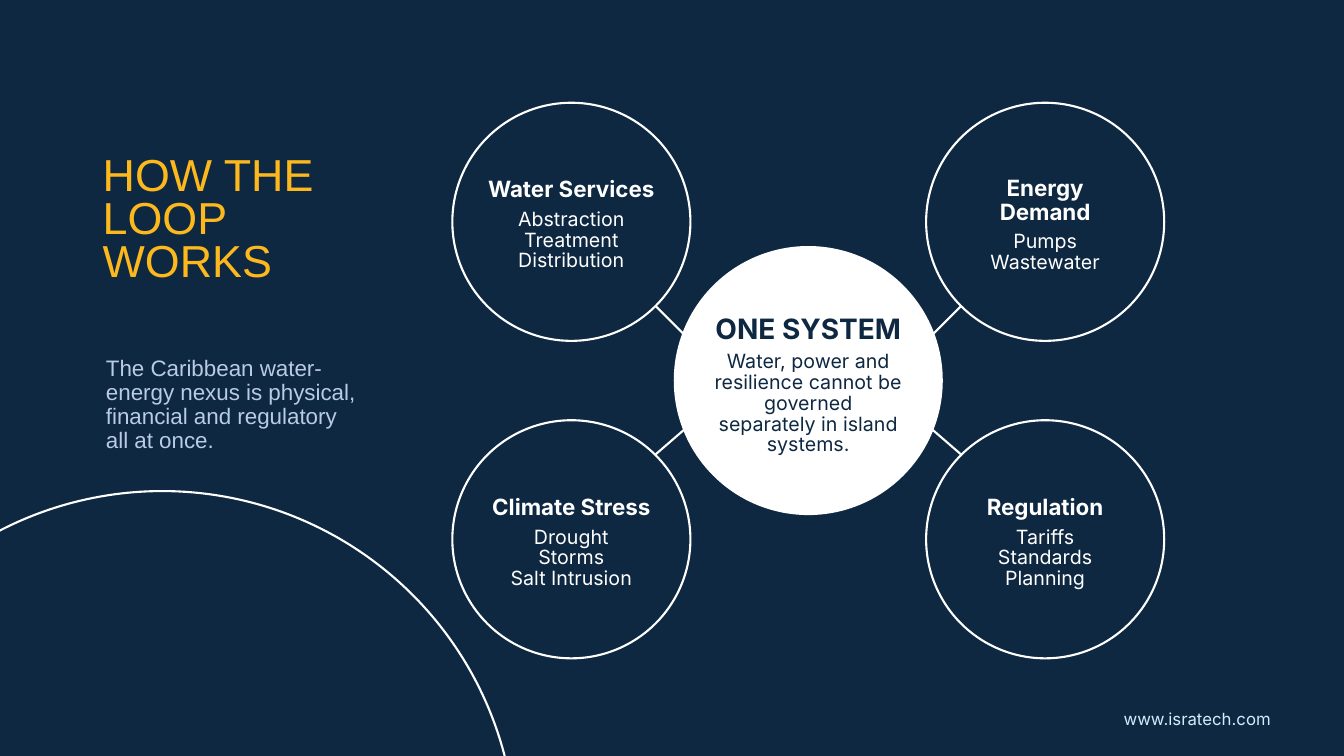
"""Builds the slide on the loop of water, energy, climate and regulation."""
import pptx
import pptx.dml.color
import pptx.enum.shapes
import pptx.enum.text
import pptx.oxml.ns
import pptx.util
from pptx.util import Cm, Pt

NAVY, WHITE, GOLD = "0E2841", "FFFFFF", "FDB81E"
MIST, ICE = "B8CCE3", "D1ECFE"
ALIGN = pptx.enum.text.PP_ALIGN
HUB = (20.37, 9.59)
REACH = (11.94, 8)
NODES = [
    (-1, -1, "Water Services", ["Abstraction", "Treatment", "Distribution"]),
    (1, -1, "Energy Demand", ["Pumps", "Wastewater"]),
    (-1, 1, "Climate Stress", ["Drought", "Storms", "Salt Intrusion"]),
    (1, 1, "Regulation", ["Tariffs", "Standards", "Planning"]),
]


def paint(target, tone):
    """Set a solid colour on a fill."""
    target.solid()
    target.fore_color.rgb = pptx.dml.color.RGBColor.from_string(tone)


def pad(frame, left, top, right, bottom):
    """Set wrapping and the four insets in centimetres."""
    frame.word_wrap = True
    frame.margin_left, frame.margin_top = Cm(left), Cm(top)
    frame.margin_right, frame.margin_bottom = Cm(right), Cm(bottom)


def write(para, text, size, tone, face, bold=False, space=1, align=ALIGN.LEFT):
    """Add one styled run to a paragraph."""
    para.alignment, para.line_spacing = align, space
    run = para.add_run()
    run.text = text
    run.font.size, run.font.name, run.font.bold = Pt(size), face, bold
    paint(run.font.fill, tone)


def label(slide, box, inset, text, *style, **more):
    """Add a text box with a single paragraph."""
    frame = slide.shapes.add_textbox(*map(Cm, box)).text_frame
    pad(frame, *inset)
    write(frame.paragraphs[0], text, *style, **more)


def ring(slide, mid, size, fill=None):
    """Add a circle round its centre, either filled or outlined."""
    left, top = (at - size / 2 for at in mid)
    shape = slide.shapes.add_shape(
        pptx.enum.shapes.MSO_SHAPE.OVAL, Cm(left), Cm(top), Cm(size), Cm(size))
    shape.shadow.inherit = False
    if fill:
        paint(shape.fill, fill)
        shape.line.fill.background()
    else:
        shape.fill.background()
        paint(shape.line.fill, WHITE)
        shape.line.width = Pt(1.5)
    return shape


def fill_in(shape, head, rows, size, tone, base):
    """Write a bold heading and its rows inside a circle."""
    frame = shape.text_frame
    pad(frame, 0, 0.79, 0, base)
    frame.vertical_anchor = pptx.enum.text.MSO_ANCHOR.MIDDLE
    style = dict(space=0.88, align=ALIGN.CENTER)
    write(frame.paragraphs[0], head, size, tone, "Inter", True, **style)
    for row in rows:
        write(frame.add_paragraph(), row, 14, tone, "Inter", **style)
    frame.paragraphs[1].space_before = Pt(5.3)


def spoke(slide, side, level):
    """Link the hub to the circle on one side and level."""
    out, near = (1.89, 1) if level < 0 else (1.87, 1.1)
    x, y = HUB
    ends = (x + side * 3.86, y + level * out, x + side * 2.97, y + level * near)
    line = slide.shapes.add_connector(
        pptx.enum.shapes.MSO_CONNECTOR.STRAIGHT, *map(Cm, ends))
    paint(line.line.fill, WHITE)
    line.line.width = Pt(1.5)
    props = line._element.spPr
    props.append(props.makeelement(pptx.oxml.ns.qn("a:effectLst"), {}))


def main():
    """Build and save the slide."""
    deck = pptx.Presentation()
    deck.slide_width, deck.slide_height = Cm(33.87), Cm(19.05)
    slide = deck.slides.add_slide(deck.slide_layouts[6])
    paint(slide.background.fill, NAVY)

    inset = (0.25, 0.13, 0.25, 0.13)
    label(slide, (25.96, 17.73, 6.32, 0.76), inset, "www.isratech.com",
          12, ICE, "Inter", align=ALIGN.RIGHT)
    label(slide, (2.34, 3.84, 6.73, 6.53), inset, "HOW THE LOOP WORKS",
          32, GOLD, "Arial", space=0.8)
    label(slide, (2.67, 8.99, 6.38, 3.66), (0, 0, 0, 0),
          "The Caribbean water-energy nexus is physical, "
          "financial and regulatory all at once.",
          16, MIST, "Arial", space=0.9)

    for side, level, head, rows in NODES:
        mid = (HUB[0] + side * REACH[0] / 2, HUB[1] + level * REACH[1] / 2)
        fill_in(ring(slide, mid, 6), head, rows, 16, WHITE, 0.6)
    fill_in(ring(slide, HUB, 6.78, WHITE), "ONE SYSTEM",
            ["Water, power and resilience cannot be governed "
             "separately in island systems."], 20, NAVY, 0.53)
    for side, level, *_ in NODES:
        spoke(slide, side, level)
    ring(slide, (4.09, 21.29), 17.83)
    deck.save("out.pptx")


if __name__ == "__main__":
    main()
